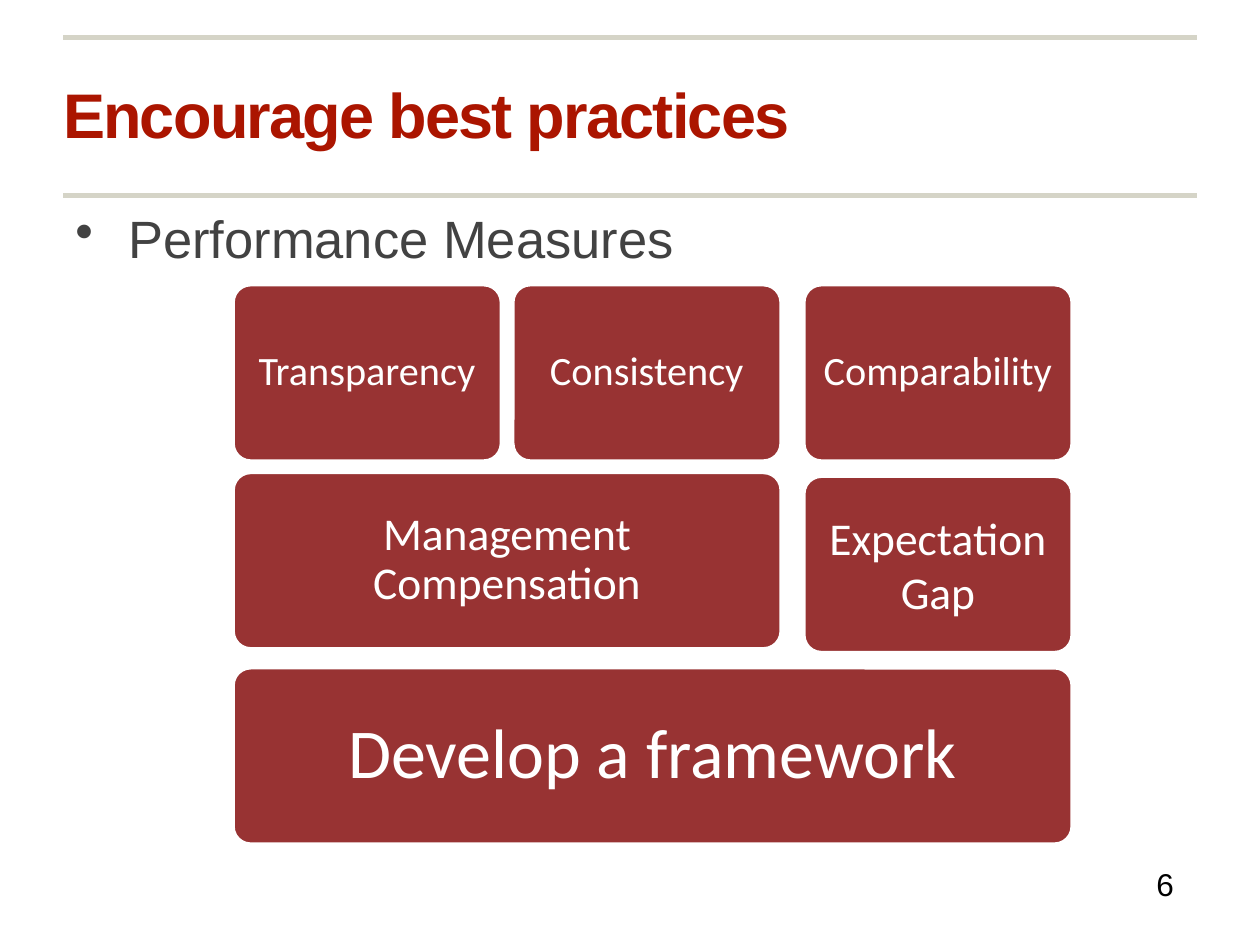
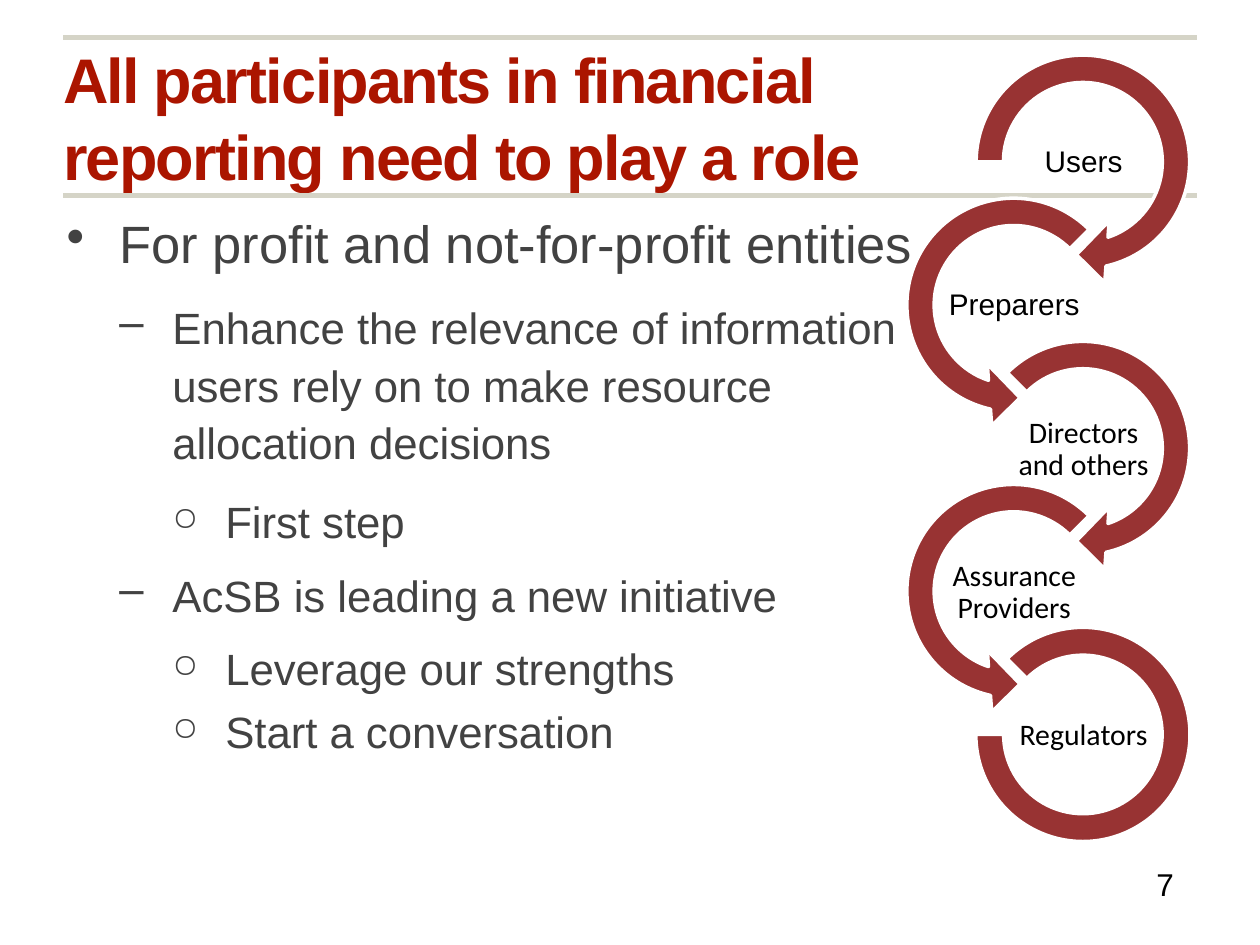
import dataclasses
from typing import NamedTuple, Optional

import lxml.etree
import pptx
import pptx.dml.color
import pptx.enum.shapes
import pptx.enum.text
import pptx.oxml.ns
import pptx.presentation
import pptx.shapes.autoshape
import pptx.slide
import pptx.text.text
import pptx.util

SLIDE_WIDTH = pptx.util.Inches(10)
SLIDE_HEIGHT = pptx.util.Inches(7.5)
COLUMNS, ROWS = 100, 75

CRIMSON, BRICK, RULE_GREY = "AB1500", "983333", "D5D4C7"
BODY_GREY, BLACK, WHITE = "424242", "000000", "FFFFFF"
SANS, DIAGRAM_FONT = "Arial", "Calibri"

ALIGN = pptx.enum.text.PP_ALIGN
ANCHOR = pptx.enum.text.MSO_ANCHOR
SHAPE = pptx.enum.shapes.MSO_SHAPE


class Area(NamedTuple):
    left: float
    top: float
    width: float
    height: float


@dataclasses.dataclass(frozen=True)
class TextStyle:
    size: float
    font: str
    color: str
    bold: bool = False
    tracking: Optional[int] = None


@dataclasses.dataclass(frozen=True)
class Bullet:
    text: str
    level: int = 0
    line_points: float = 33
    after: float = 0


@dataclasses.dataclass(frozen=True)
class Block:
    text: str
    area: Area
    size: float
    inset: float
    line_spacing: float = 0.9


@dataclasses.dataclass(frozen=True)
class Ring:
    label: str
    font: str
    kind: SHAPE
    adjustments: tuple[float, ...]


class BulletLevel(NamedTuple):
    character: str
    size: float
    scale: Optional[int]


LEVELS = [BulletLevel("•", 30, None), BulletLevel("–", 25, None), BulletLevel("○", 25, 75)]
BULLET_INDENT = 0.42

TITLE_STYLE = TextStyle(36, SANS, CRIMSON, True, -100)
PAGE_STYLE = TextStyle(18, SANS, BLACK)
RULE_ROWS = (3, 15.5)

BLOCK_LEFTS = (18.5, 40.7, 63.8)
BLOCK_WIDTH, BLOCK_HEIGHT = 21.3, 14
PAIR_WIDTH = BLOCK_LEFTS[1] + BLOCK_WIDTH - BLOCK_LEFTS[0]
FULL_WIDTH = BLOCK_LEFTS[2] + BLOCK_WIDTH - BLOCK_LEFTS[0]
TOP_ROW = 22.6

BLOCKS = [
    Block(text, Area(left, TOP_ROW, BLOCK_WIDTH, BLOCK_HEIGHT), 23, 0.1)
    for text, left in zip(("Transparency", "Consistency", "Comparability"), BLOCK_LEFTS)
] + [
    Block("Management Compensation", Area(BLOCK_LEFTS[0], 37.5, PAIR_WIDTH, BLOCK_HEIGHT), 26, 0.11),
    Block("Expectation Gap", Area(BLOCK_LEFTS[2], 37.8, BLOCK_WIDTH, BLOCK_HEIGHT), 26, 0.11, 1),
    Block("Develop a framework", Area(BLOCK_LEFTS[0], 53, FULL_WIDTH, BLOCK_HEIGHT), 40, 0.17),
]

ROLE_BULLETS = [
    Bullet("For profit and not-for-profit entities", after=6),
    Bullet(
        "Enhance the relevance of information users rely on to make resource allocation decisions",
        1, after=6,
    ),
    Bullet("First step", 2, after=6),
    Bullet("AcSB is leading a new initiative", 1, 30, 6),
    Bullet("Leverage our strengths", 2, 30),
    Bullet("Start a conversation", 2, 30),
]

RIGHT_ARROW, LEFT_ARROW = SHAPE.CIRCULAR_ARROW, SHAPE.LEFT_CIRCULAR_ARROW
ARROW_BODY, ARROW_HEAD = (0.11, 11.42), 0.125
LEFT_TURN = (*ARROW_BODY, 63, 189, ARROW_HEAD)
RINGS = [
    Ring("Users", SANS, RIGHT_ARROW, (*ARROW_BODY, 45, 108, ARROW_HEAD)),
    Ring("Preparers", SANS, LEFT_ARROW, LEFT_TURN),
    Ring("Directors and others", DIAGRAM_FONT, RIGHT_ARROW, (*ARROW_BODY, 45, 135, ARROW_HEAD)),
    Ring("Assurance Providers", DIAGRAM_FONT, LEFT_ARROW, LEFT_TURN),
    Ring("Regulators", DIAGRAM_FONT, SHAPE.BLOCK_ARC, (135, 108, 0.13)),
]
RING_LEFTS = (76.1, 70.6)
RING_TOP, RING_STEP, RING_SIZE = 3, 11.36, 19.7
ARC_MARGIN = 1.35
LABEL_OFFSET_X, LABEL_OFFSET_Y = 4.4, 7.2
LABEL_WIDTH, LABEL_HEIGHT = 11, 5.5


def across(columns: float) -> int:
    return round(SLIDE_WIDTH * columns / COLUMNS)


def down(rows: float) -> int:
    return round(SLIDE_HEIGHT * rows / ROWS)


def bounds(area: Area) -> tuple[int, int, int, int]:
    return across(area.left), down(area.top), across(area.width), down(area.height)


def rgb(color: str) -> pptx.dml.color.RGBColor:
    return pptx.dml.color.RGBColor.from_string(color)


def add_run(paragraph: pptx.text.text._Paragraph, text: str, style: TextStyle) -> None:
    run = paragraph.add_run()
    run.text = text
    run.font.name = style.font
    run.font.size = pptx.util.Pt(style.size)
    run.font.bold = style.bold
    run.font.color.rgb = rgb(style.color)
    if style.tracking is not None:
        run._r.get_or_add_rPr().set("spc", str(style.tracking))


def prepare_frame(frame: pptx.text.text.TextFrame, anchor: ANCHOR, inset: float) -> None:
    frame.word_wrap = True
    frame.auto_size = pptx.enum.text.MSO_AUTO_SIZE.NONE
    frame.vertical_anchor = anchor
    frame.margin_left = frame.margin_right = pptx.util.Inches(inset)
    frame.margin_top = frame.margin_bottom = pptx.util.Inches(inset)


def write_centered(
    frame: pptx.text.text.TextFrame, text: str, style: TextStyle, inset: float, spacing: float
) -> None:
    prepare_frame(frame, ANCHOR.MIDDLE, inset)
    paragraph = frame.paragraphs[0]
    paragraph.alignment = ALIGN.CENTER
    paragraph.line_spacing = spacing
    add_run(paragraph, text, style)


def add_rule(slide: pptx.slide.Slide, row: float) -> None:
    connector = slide.shapes.add_connector(
        pptx.enum.shapes.MSO_CONNECTOR.STRAIGHT, across(5), down(row), across(95), down(row)
    )
    connector.line.color.rgb = rgb(RULE_GREY)
    connector.line.width = pptx.util.Pt(3)
    lxml.etree.SubElement(connector._element.spPr, pptx.oxml.ns.qn("a:effectLst"))


def add_titled_slide(
    presentation: pptx.presentation.Presentation, title: str, area: Area, page: int
) -> pptx.slide.Slide:
    slide = presentation.slides.add_slide(presentation.slide_layouts.get_by_name("Title Only"))
    for row in RULE_ROWS:
        add_rule(slide, row)
    placeholder = slide.shapes.title
    placeholder.left, placeholder.top, placeholder.width, placeholder.height = bounds(area)
    prepare_frame(placeholder.text_frame, ANCHOR.MIDDLE, 0)
    paragraph = placeholder.text_frame.paragraphs[0]
    paragraph.alignment = ALIGN.LEFT
    paragraph.line_spacing = pptx.util.Pt(44)
    add_run(paragraph, title, TITLE_STYLE)

    page_box = slide.shapes.add_textbox(*bounds(Area(90.8, 68.2, 4, 4)))
    page_box.text_frame.word_wrap = True
    add_run(page_box.text_frame.paragraphs[0], str(page), PAGE_STYLE)
    return slide


def format_bullet(paragraph: pptx.text.text._Paragraph, bullet: Bullet) -> None:
    level = LEVELS[bullet.level]
    properties = paragraph._p.get_or_add_pPr()
    properties.set("marL", str(pptx.util.Inches(BULLET_INDENT * (bullet.level + 1))))
    properties.set("indent", str(-pptx.util.Inches(BULLET_INDENT)))
    if level.scale:
        scale = lxml.etree.SubElement(properties, pptx.oxml.ns.qn("a:buSzPct"))
        scale.set("val", str(level.scale * 1000))
    character = lxml.etree.SubElement(properties, pptx.oxml.ns.qn("a:buChar"))
    character.set("char", level.character)


def add_bullets(slide: pptx.slide.Slide, area: Area, bullets: list[Bullet]) -> None:
    frame = slide.shapes.add_textbox(*bounds(area)).text_frame
    frame.word_wrap = True
    for index, bullet in enumerate(bullets):
        paragraph = frame.add_paragraph() if index else frame.paragraphs[0]
        format_bullet(paragraph, bullet)
        paragraph.level = bullet.level
        paragraph.line_spacing = pptx.util.Pt(bullet.line_points)
        paragraph.space_before = pptx.util.Pt(6 if index else 0)
        paragraph.space_after = pptx.util.Pt(bullet.after)
        add_run(paragraph, bullet.text, TextStyle(LEVELS[bullet.level].size, SANS, BODY_GREY))


def add_brick_shape(
    slide: pptx.slide.Slide, kind: SHAPE, area: Area, adjustments: tuple[float, ...]
) -> pptx.shapes.autoshape.Shape:
    shape = slide.shapes.add_shape(kind, *bounds(area))
    shape.shadow.inherit = False
    shape.fill.solid()
    shape.fill.fore_color.rgb = rgb(BRICK)
    shape.line.color.rgb = rgb(WHITE)
    shape.line.width = pptx.util.Pt(2)
    for index, value in enumerate(adjustments):
        shape.adjustments[index] = value
    return shape


def add_block(slide: pptx.slide.Slide, block: Block) -> None:
    shape = add_brick_shape(slide, SHAPE.ROUNDED_RECTANGLE, block.area, (0.1,))
    style = TextStyle(block.size, DIAGRAM_FONT, WHITE)
    write_centered(shape.text_frame, block.text, style, block.inset, block.line_spacing)


def add_ring(slide: pptx.slide.Slide, index: int, ring: Ring) -> None:
    left = RING_LEFTS[index % 2]
    top = RING_TOP + index * RING_STEP
    margin = ARC_MARGIN if ring.kind == SHAPE.BLOCK_ARC else 0
    size = RING_SIZE - 2 * margin
    add_brick_shape(slide, ring.kind, Area(left + margin, top + margin, size, size), ring.adjustments)
    label_area = Area(left + LABEL_OFFSET_X, top + LABEL_OFFSET_Y, LABEL_WIDTH, LABEL_HEIGHT)
    label = slide.shapes.add_textbox(*bounds(label_area))
    write_centered(label.text_frame, ring.label, TextStyle(17, ring.font, BLACK), 0.01, 0.9)


def build_practices(presentation: pptx.presentation.Presentation) -> None:
    slide = add_titled_slide(presentation, "Encourage best practices", Area(5, 3.3, 90, 11.2), 6)
    add_bullets(slide, Area(5, 16.3, 90, 49.5), [Bullet("Performance Measures")])
    for block in BLOCKS:
        add_block(slide, block)


def build_participants(presentation: pptx.presentation.Presentation) -> None:
    title = "All participants in financial reporting need to play a role"
    slide = add_titled_slide(presentation, title, Area(5, 3, 73.3, 12.5), 7)
    add_bullets(slide, Area(4.3, 16.7, 70, 48.7), ROLE_BULLETS)
    for index, ring in enumerate(RINGS):
        add_ring(slide, index, ring)


def main() -> None:
    presentation = pptx.Presentation()
    presentation.slide_width = SLIDE_WIDTH
    presentation.slide_height = SLIDE_HEIGHT
    build_practices(presentation)
    build_participants(presentation)
    presentation.save("out.pptx")


if __name__ == "__main__":
    main()
